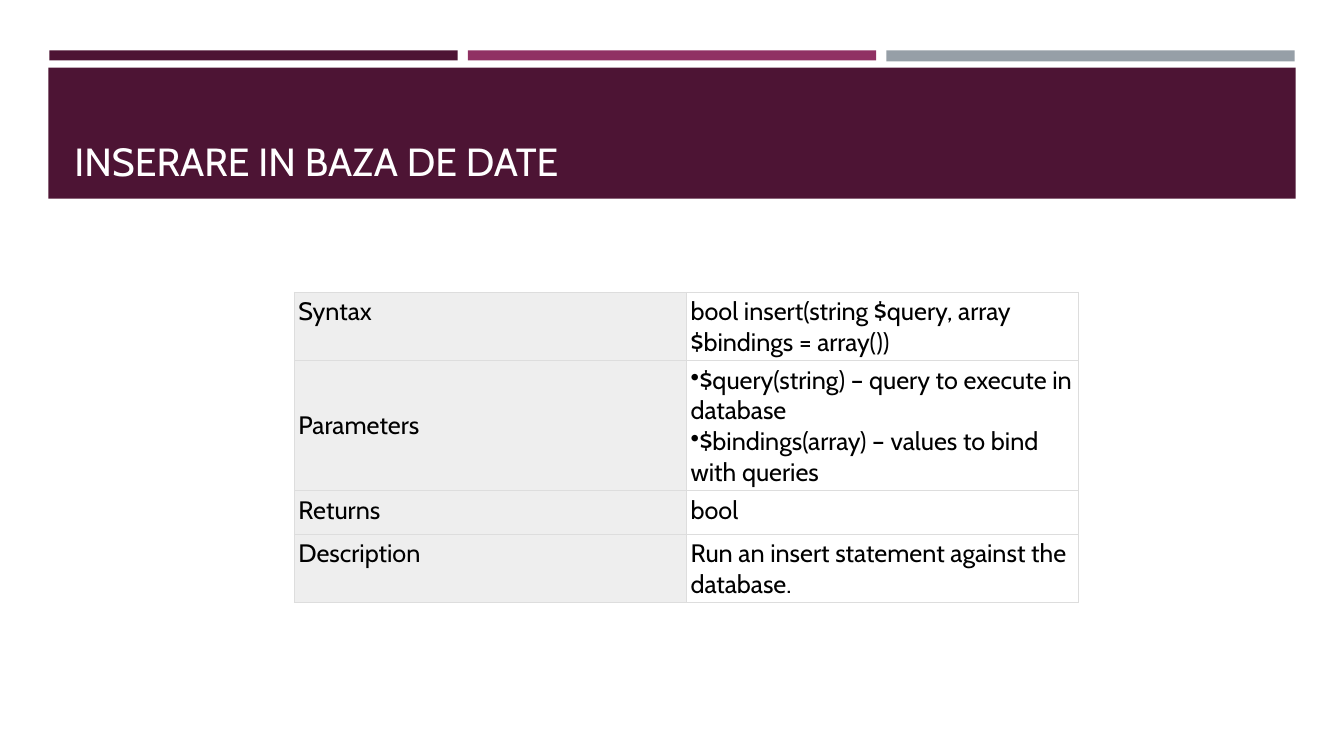
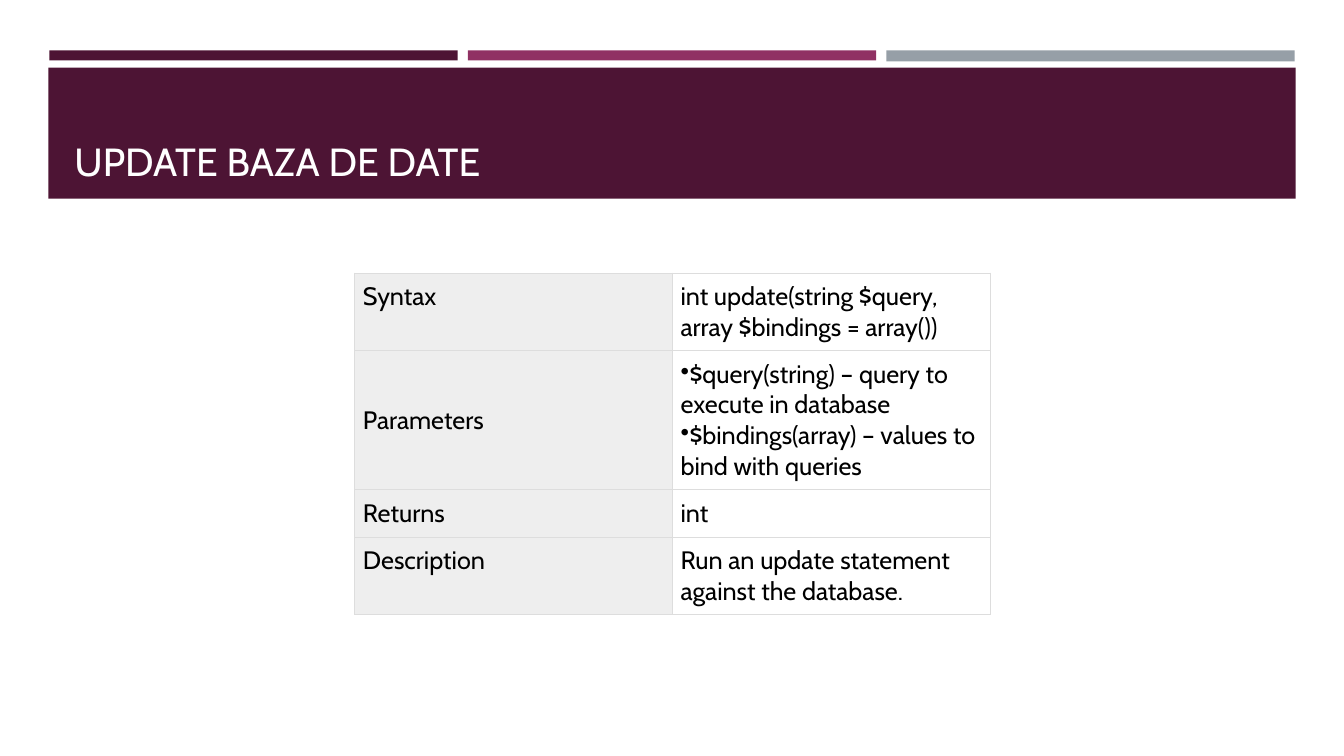
"""Build two slides that document database calls in tables."""
from dataclasses import dataclass
from typing import Any

from pptx import Presentation
from pptx.dml.color import RGBColor
from pptx.enum.shapes import MSO_SHAPE as Preset
from pptx.enum.text import MSO_ANCHOR as Anchor
from pptx.oxml import parse_xml
from pptx.oxml.ns import nsdecls
from pptx.util import Emu, Pt

EMU_PER_PX = 9144
PLUM = RGBColor(0x4D, 0x14, 0x34)
MAGENTA = RGBColor(0x90, 0x31, 0x63)
SLATE = RGBColor(0x96, 0x9F, 0xA7)
WHITE = RGBColor(0xFF, 0xFF, 0xFF)
BLACK = RGBColor(0, 0, 0)
LABEL_GREY = RGBColor(0xEE, 0xEE, 0xEE)
RULE_GREY = RGBColor(0xDD, 0xDD, 0xDD)
FONT = "Cabin"
TITLE_FORMAT = {"word_wrap": True, "vertical_anchor": Anchor.BOTTOM}
PLAIN_TABLE = {"first_row": False, "horz_banding": False}
MARGINS = ("margin_left", "margin_top", "margin_right", "margin_bottom")
PARAMETERS = (
    "$query(string) – query to execute in database",
    "$bindings(array) – values to bind with queries",
)


@dataclass(frozen=True)
class Band:
    left: int
    top: int
    width: int
    height: int
    color: RGBColor


@dataclass(frozen=True)
class MethodPage:
    title: str
    syntax: str
    returns: str
    description: str
    left: int
    top: int
    column_width: int
    row_heights: tuple[int, ...]
    padding: int


STRIPES = [
    Band(49 + 415 * i, 50, 405, 10 + i // 2, color)
    for i, color in enumerate((PLUM, MAGENTA, SLATE))
]
BANDS = [*STRIPES, Band(48, 67, 1237, 130, PLUM)]
PAGES = [
    MethodPage(
        "INSERARE IN BAZA DE DATE",
        "bool insert(string $query, array $bindings = array())",
        "bool",
        "Run an insert statement against the database.",
        292, 290, 389, (68, 129, 43, 68), 4,
    ),
    MethodPage(
        "UPDATE BAZA DE DATE",
        "int update(string $query, array $bindings = array())",
        "int",
        "Run an update statement against the database.",
        352, 271, 315, (77, 138, 47, 77), 8,
    ),
]


def px(length: int) -> Emu:
    """Turn pixels into EMU."""
    return Emu(length * EMU_PER_PX)


def apply(target: Any, values: dict[str, Any]) -> None:
    """Set each named attribute on the target."""
    for name, value in values.items():
        setattr(target, name, value)


def write(paragraph: Any, text: str, size: int, color: RGBColor) -> None:
    """Add one formatted run to a paragraph."""
    run = paragraph.add_run()
    run.text = text
    apply(run.font, {"name": FONT, "size": Pt(size)})
    run.font.color.rgb = color


def draw_band(slide: Any, band: Band) -> None:
    """Draw a plain filled band."""
    bar = slide.shapes.add_shape(
        Preset.RECTANGLE, *map(px, (band.left, band.top, band.width, band.height))
    )
    bar.shadow.inherit = False
    bar.fill.solid()
    bar.fill.fore_color.rgb = band.color
    bar.line.fill.background()


def draw_title(slide: Any, title: str) -> None:
    """Write the title at the foot of the header band."""
    frame = slide.shapes.add_textbox(*map(px, (64, 77, 1206, 111))).text_frame
    apply(frame, TITLE_FORMAT)
    write(frame.paragraphs[0], title, 28, WHITE)


def add_bullet(paragraph: Any) -> None:
    """Put a bullet directly before the text."""
    properties = paragraph._p.get_or_add_pPr()
    properties.set("marL", "0")
    properties.set("indent", "0")
    properties.append(parse_xml(f'<a:buChar {nsdecls("a")} char="•"/>'))


def draw_borders(cell: Any) -> None:
    """Rule all four sides of a cell."""
    properties = cell._tc.get_or_add_tcPr()
    for side in "LRTB":
        properties.append(parse_xml(
            f'<a:ln{side} {nsdecls("a")} w="{Pt(0.75)}"><a:solidFill>'
            f'<a:srgbClr val="{RULE_GREY}"/></a:solidFill></a:ln{side}>'
        ))


def fill_cell(cell: Any, lines: tuple[str, ...], color: RGBColor, padding: int) -> None:
    """Format a cell and write its lines, bulleted when there are several."""
    apply(cell, dict.fromkeys(MARGINS, px(padding)))
    draw_borders(cell)
    cell.fill.solid()
    cell.fill.fore_color.rgb = color
    frame = cell.text_frame
    for i, line in enumerate(lines):
        paragraph = frame.add_paragraph() if i else frame.paragraphs[0]
        if len(lines) > 1:
            add_bullet(paragraph)
        write(paragraph, line, 18, BLACK)


def draw_method_table(slide: Any, page: MethodPage) -> None:
    """Draw the table that describes one method."""
    entries = [
        ("Syntax", (page.syntax,)),
        ("Parameters", PARAMETERS),
        ("Returns", (page.returns,)),
        ("Description", (page.description,)),
    ]
    table = slide.shapes.add_table(
        len(entries), 2, px(page.left), px(page.top),
        px(2 * page.column_width), px(sum(page.row_heights)),
    ).table
    apply(table, PLAIN_TABLE)
    for column in table.columns:
        column.width = px(page.column_width)
    for row, height, (label, details) in zip(table.rows, page.row_heights, entries):
        row.height = px(height)
        label_cell, detail_cell = row.cells
        fill_cell(label_cell, (label,), LABEL_GREY, page.padding)
        fill_cell(detail_cell, details, WHITE, page.padding)
        if len(details) > 1:
            label_cell.vertical_anchor = Anchor.MIDDLE


def main() -> None:
    """Build and save the presentation."""
    deck = Presentation()
    apply(deck, {"slide_width": px(1333), "slide_height": px(750)})
    for page in PAGES:
        slide = deck.slides.add_slide(deck.slide_layouts[6])
        for band in BANDS:
            draw_band(slide, band)
        draw_title(slide, page.title)
        draw_method_table(slide, page)
    deck.save("out.pptx")


if __name__ == "__main__":
    main()
